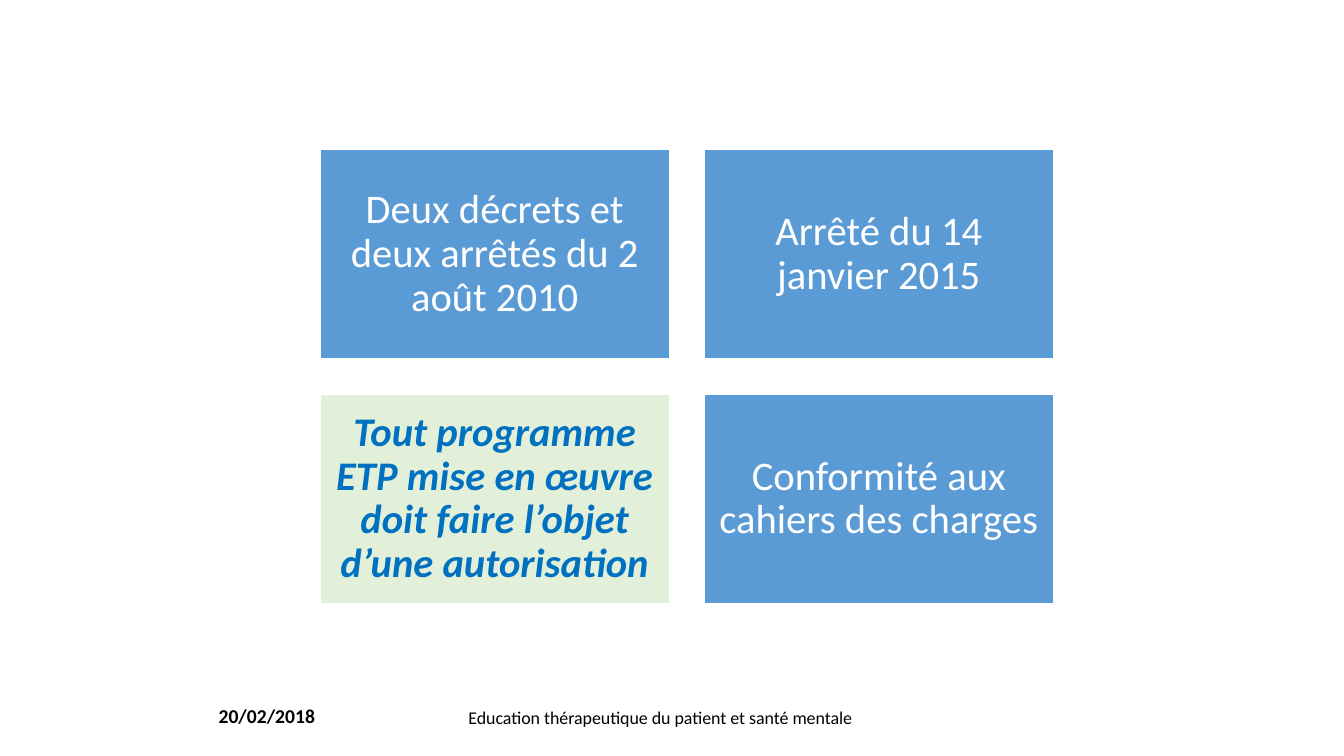
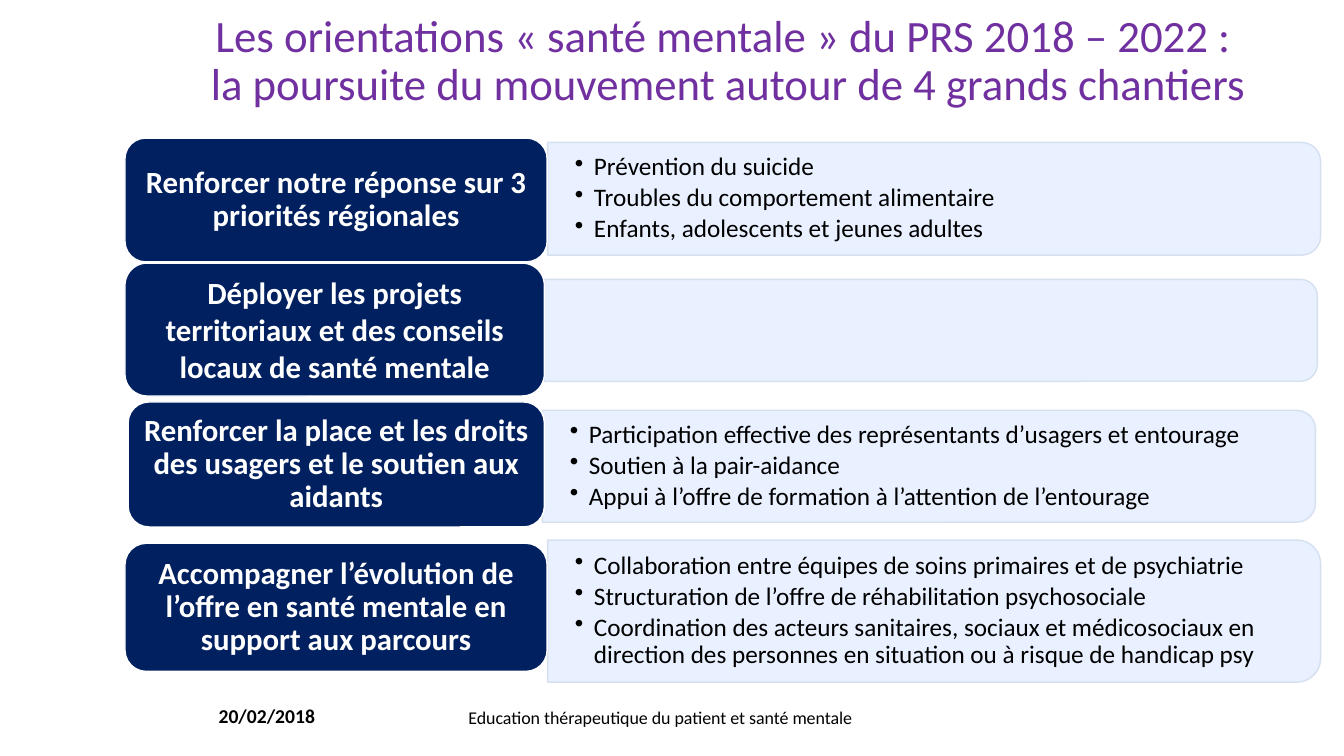
from lxml.etree import SubElement
from pptx import Presentation
from pptx.dml.color import RGBColor
from pptx.enum.shapes import MSO_SHAPE as Shape
from pptx.enum.text import MSO_ANCHOR as Anchor, PP_ALIGN as Align
from pptx.oxml.ns import qn
from pptx.util import Cm, Pt

FONT = "Calibri"
WHITE = RGBColor(0xFF, 0xFF, 0xFF)
BLACK = RGBColor(0x00, 0x00, 0x00)
BLUE = RGBColor(0x5B, 0x9B, 0xD5)
PALE_GREEN = RGBColor(0xE2, 0xF0, 0xD9)
BRIGHT_BLUE = RGBColor(0x00, 0x70, 0xC0)
NAVY = RGBColor(0x00, 0x20, 0x60)
PALE_BLUE = RGBColor(0xE7, 0xEF, 0xFF)
PANEL_LINE = RGBColor(0xD2, 0xDE, 0xEF)
PURPLE = RGBColor(0x70, 0x30, 0xA0)

DATE = "20/02/2018"
FOOTER = "Education thérapeutique du patient et santé mentale"
TITLE = (
    "Les orientations «\u00a0santé mentale\u00a0» du PRS 2018 – 2022 : \v"
    "la poursuite du mouvement autour de 4 grands chantiers"
)

# Text, fill, text colour, emphasis
LEGAL_CARDS = [
    ("Deux décrets et deux arrêtés du 2 août 2010", BLUE, WHITE, False),
    ("Arrêté du 14 janvier 2015", BLUE, WHITE, False),
    ("Tout programme ETP mise en œuvre doit faire l’objet d’une autorisation",
     PALE_GREEN, BRIGHT_BLUE, True),
    ("Conformité aux cahiers des charges", BLUE, WHITE, False),
]

# Label, its box, its line spacing, panel box, points; boxes in centimetres
PANEL_WIDTH = 19.48
PRIORITIES = [
    ("Renforcer notre réponse sur 3 priorités régionales",
     (3.15, 3.48, 10.64, 3.12), 0.9, (13.8, 3.59, PANEL_WIDTH, 2.84),
     ["Prévention du suicide",
      "Troubles du comportement alimentaire",
      "Enfants, adolescents et jeunes adultes"]),
    ("Déployer les projets territoriaux et des conseils locaux de santé mentale",
     (3.15, 6.63, 10.57, 3.35), 1.0, (13.72, 7.04, PANEL_WIDTH, 2.57), []),
    ("Renforcer la place et les droits des usagers et le soutien aux aidants",
     (3.23, 10.13, 10.49, 3.15), 0.9, (13.67, 10.34, PANEL_WIDTH, 2.82),
     ["Participation effective des représentants d’usagers et entourage",
      "Soutien à la pair-aidance",
      "Appui à l’offre de formation à l’attention de l’entourage"]),
    ("Accompagner l’évolution de l’offre en santé mentale en support aux parcours",
     (3.15, 13.69, 10.64, 3.23), 0.9, (13.8, 13.61, PANEL_WIDTH, 3.58),
     ["Collaboration entre équipes de soins primaires et de psychiatrie",
      "Structuration de l’offre de réhabilitation psychosociale",
      "Coordination des acteurs sanitaires, sociaux et médicosociaux en "
      "direction des personnes en situation ou à risque de handicap psy"]),
]


def style_paragraph(paragraph, size, color, align=Align.LEFT, spacing=1.0,
                    bold=False, italic=False):
    paragraph.alignment = align
    paragraph.line_spacing = spacing
    font = paragraph.font
    font.name, font.size = FONT, Pt(size)
    font.bold, font.italic = bold, italic
    font.color.rgb = color


def prepare_frame(shape, inset_x=0.25, inset_y=0.13, anchor=Anchor.MIDDLE):
    frame = shape.text_frame
    frame.word_wrap = True
    frame.vertical_anchor = anchor
    frame.margin_left = frame.margin_right = Cm(inset_x)
    frame.margin_top = frame.margin_bottom = Cm(inset_y)
    return frame


def add_box(slide, kind, box, fill, line):
    shape = slide.shapes.add_shape(kind, *map(Cm, box))
    shape.shadow.inherit = False
    shape.fill.solid()
    shape.fill.fore_color.rgb = fill
    shape.line.color.rgb = line
    shape.line.width = Pt(1)
    return shape


def add_text(slide, box, text, size, color, anchor=Anchor.TOP, **style):
    frame = prepare_frame(slide.shapes.add_textbox(*map(Cm, box)), anchor=anchor)
    paragraph = frame.paragraphs[0]
    paragraph.text = text
    style_paragraph(paragraph, size, color, **style)
    return paragraph


def add_footer(slide):
    footer = add_text(slide, (10.36, 17.58, 12.55, 1.19), FOOTER, 22, BLACK,
                      align=Align.CENTER)
    footer.runs[0]._r.get_or_add_rPr().set("baseline", "30000")
    add_text(slide, (5.26, 17.6, 7.01, 0.86), DATE, 14, BLACK, bold=True)


def add_card(slide, box, text, fill, color, emphasis):
    card = add_box(slide, Shape.RECTANGLE, box, fill, WHITE)
    paragraph = prepare_frame(card, 0.3, 0.3).paragraphs[0]
    paragraph.text = text
    style_paragraph(paragraph, 29, color, Align.CENTER, 0.9, emphasis, emphasis)


def add_card_grid(slide, left, top, width, height, gap, columns=2):
    for index, card in enumerate(LEGAL_CARDS):
        row, column = divmod(index, columns)
        box = (left + column * (width + gap), top + row * (height + gap),
               width, height)
        add_card(slide, box, *card)


def add_bullet(paragraph):
    properties = paragraph._p.get_or_add_pPr()
    properties.set("marL", str(Cm(0.48)))
    properties.set("indent", str(-Cm(0.48)))
    SubElement(properties, qn("a:buChar")).set("char", "•")


def add_panel(slide, box, points):
    """Panel with rounded right corners: a quarter-turned shape under its text."""
    left, top, width, height = box
    upright = (left + (width - height) / 2, top + (height - width) / 2,
               height, width)
    panel = add_box(slide, Shape.ROUND_2_SAME_RECTANGLE, upright,
                    PALE_BLUE, PANEL_LINE)
    panel.rotation = 90
    for color in panel._element.spPr.iter(qn("a:srgbClr")):
        SubElement(color, qn("a:alpha")).set("val", "90000")
    if not points:
        return
    frame = prepare_frame(slide.shapes.add_textbox(*map(Cm, box)), 0.69, 0.36)
    for index, point in enumerate(points):
        paragraph = frame.add_paragraph() if index else frame.paragraphs[0]
        paragraph.text = point
        add_bullet(paragraph)
        style_paragraph(paragraph, 18, BLACK, spacing=0.9)
        paragraph.space_after = Pt(2.7)


def add_label(slide, box, text, spacing):
    label = add_box(slide, Shape.ROUNDED_RECTANGLE, box, NAVY, WHITE)
    paragraph = prepare_frame(label, 0.23, 0.13).paragraphs[0]
    paragraph.text = text
    style_paragraph(paragraph, 22, WHITE, Align.CENTER, spacing, bold=True)


def build_legal_slide(slide):
    add_footer(slide)
    add_card_grid(slide, 8.07, 3.77, 8.8, 5.28, 0.88)


def build_priorities_slide(slide):
    add_footer(slide)
    add_text(slide, (4.95, 0.36, 26.82, 2.41), TITLE, 32, PURPLE, Anchor.MIDDLE,
             align=Align.CENTER, spacing=0.9)
    for text, label_box, spacing, panel_box, points in PRIORITIES:
        add_panel(slide, panel_box, points)
        add_label(slide, label_box, text, spacing)


def main():
    presentation = Presentation()
    presentation.slide_width, presentation.slide_height = Cm(33.87), Cm(19.05)
    blank = presentation.slide_layouts[6]
    for build in (build_legal_slide, build_priorities_slide):
        build(presentation.slides.add_slide(blank))
    presentation.save("out.pptx")


if __name__ == "__main__":
    main()
